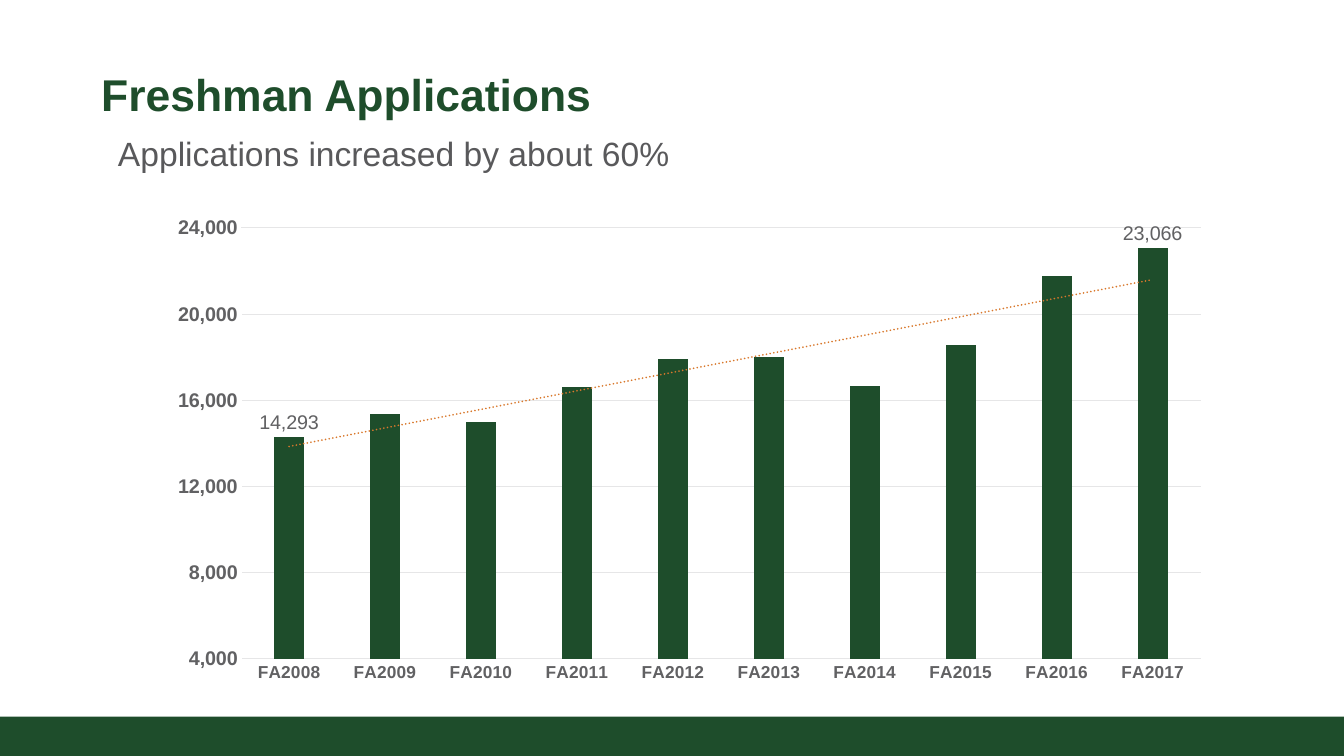
from dataclasses import dataclass

from lxml import etree
from pptx import Presentation
from pptx.chart.data import CategoryChartData
from pptx.dml.color import RGBColor
from pptx.enum.chart import XL_CHART_TYPE, XL_LABEL_POSITION, XL_TICK_MARK
from pptx.enum.shapes import MSO_SHAPE
from pptx.enum.text import MSO_ANCHOR, PP_ALIGN
from pptx.oxml import parse_xml
from pptx.oxml.ns import nsdecls, qn
from pptx.util import Cm, Pt

COLUMNS = XL_CHART_TYPE.COLUMN_CLUSTERED
OUTSIDE_END = XL_LABEL_POSITION.OUTSIDE_END
NO_TICK = XL_TICK_MARK.NONE
RECTANGLE = MSO_SHAPE.RECTANGLE
BOTTOM = MSO_ANCHOR.BOTTOM
LEFT = PP_ALIGN.LEFT


@dataclass(frozen=True)
class Theme:
    font: str = "Arial"
    green: str = "1E4D2B"
    subtitle: str = "59595B"
    label: str = "616163"
    grid: str = "E6E6E7"
    trend: str = "D9782C"
    white: str = "FFFFFF"
    title_size: float = 36
    subtitle_size: float = 27.2
    value_size: float = 16
    category_size: float = 14


THEME = Theme()
SLIDE_WIDTH, SLIDE_HEIGHT = Cm(38.38), Cm(21.59)
BAND_HEIGHT = Cm(1.12)
FIRST_YEAR = 2008
APPLICATIONS = (14293, 15357, 15014, 16602, 17935, 18014, 16667, 18570, 21781, 23066)
PLOT_LAYOUT = {"x": 0.112, "y": 0.072, "w": 0.863, "h": 0.827}


def style_font(font, size, color, bold=False):
    font.name = THEME.font
    font.size = Pt(size)
    font.bold = bold
    font.color.rgb = RGBColor.from_string(color)


def style_line(line, color):
    line.color.rgb = RGBColor.from_string(color)
    line.width = Pt(0.75)


def add_run(paragraph, text, size, color, bold=False):
    run = paragraph.add_run()
    run.text = text
    style_font(run.font, size, color, bold)


def add_band(slide, left, top, width, height):
    band = slide.shapes.add_shape(RECTANGLE, left, top, width, height)
    band.shadow.inherit = False
    band.fill.solid()
    band.fill.fore_color.rgb = RGBColor.from_string(THEME.green)
    band.line.fill.background()


def add_heading(slide, left, top, width, height):
    title = slide.shapes.title
    title.left, title.top, title.width, title.height = left, top, width, Cm(2.06)
    frame = title.text_frame
    frame.vertical_anchor = BOTTOM
    frame.margin_left = frame.margin_right = Cm(0.25)
    frame.margin_top = frame.margin_bottom = Cm(0.25)
    paragraph = frame.paragraphs[0]
    paragraph.alignment = LEFT
    add_run(paragraph, "Freshman Applications", THEME.title_size, THEME.green, True)

    subtitle_height = Cm(1.42)
    subtitle = slide.shapes.add_textbox(
        left + Cm(0.48), top + height - subtitle_height, Cm(27.43), subtitle_height)
    subtitle.text_frame.word_wrap = True
    add_run(subtitle.text_frame.paragraphs[0], "Applications increased by about 60%",
            THEME.subtitle_size, THEME.subtitle)


def style_axis(axis, size, line_color):
    axis.major_tick_mark = axis.minor_tick_mark = NO_TICK
    style_font(axis.tick_labels.font, size, THEME.label, True)
    style_line(axis.format.line, line_color)


def set_plot_layout(chart):
    plot_area = chart.element.find(".//" + qn("c:plotArea"))
    for layout in plot_area.findall(qn("c:layout")):
        plot_area.remove(layout)
    layout = parse_xml(f"<c:layout {nsdecls('c')}><c:manualLayout/></c:layout>")
    settings = {"layoutTarget": "inner", "xMode": "edge", "yMode": "edge", **PLOT_LAYOUT}
    for name, value in settings.items():
        etree.SubElement(layout[0], qn(f"c:{name}")).set("val", str(value))
    plot_area.insert(0, layout)


def add_trend_line(series):
    trend_line = parse_xml(
        f'<c:trendline {nsdecls("c", "a")}><c:spPr><a:ln w="{Pt(1.5)}" cap="rnd">'
        f'<a:solidFill><a:srgbClr val="{THEME.trend}"/></a:solidFill>'
        '<a:prstDash val="sysDot"/></a:ln></c:spPr><c:trendlineType val="linear"/>'
        '<c:dispRSqr val="0"/><c:dispEq val="0"/></c:trendline>')
    series._element.find(qn("c:cat")).addprevious(trend_line)


def add_applications_chart(slide, left, top, width, height):
    data = CategoryChartData(number_format="#,##0")
    data.categories = [f"FA{FIRST_YEAR + year}" for year in range(len(APPLICATIONS))]
    data.add_series("Applications", APPLICATIONS)
    chart = slide.shapes.add_chart(COLUMNS, left, top, width, height, data).chart
    chart.has_title = chart.has_legend = False
    style_font(chart.font, THEME.value_size, THEME.label)
    set_plot_layout(chart)

    style_axis(chart.category_axis, THEME.category_size, THEME.grid)
    value_axis = chart.value_axis
    style_axis(value_axis, THEME.value_size, THEME.white)
    value_axis.minimum_scale, value_axis.maximum_scale = 4000, 24000
    value_axis.major_unit = 4000
    value_axis.tick_labels.number_format = "#,##0"
    value_axis.tick_labels.number_format_is_linked = False
    style_line(value_axis.major_gridlines.format.line, THEME.grid)

    plot = chart.plots[0]
    plot.gap_width, plot.overlap = 219, -27
    plot.vary_by_categories = False
    series = plot.series[0]
    series.format.fill.solid()
    series.format.fill.fore_color.rgb = RGBColor.from_string(THEME.green)
    series.data_labels.show_value = False
    for index in (0, len(APPLICATIONS) - 1):
        label = series.points[index].data_label
        style_font(label.font, THEME.value_size, THEME.label)
        label.position = OUTSIDE_END
    add_trend_line(series)


def main():
    presentation = Presentation()
    presentation.slide_width, presentation.slide_height = SLIDE_WIDTH, SLIDE_HEIGHT
    slide = presentation.slides.add_slide(presentation.slide_layouts.get_by_name("Title Only"))
    add_band(slide, 0, SLIDE_HEIGHT - BAND_HEIGHT, SLIDE_WIDTH, BAND_HEIGHT)
    add_heading(slide, Cm(2.64), Cm(1.63), Cm(33.1), Cm(3.45))
    add_applications_chart(slide, Cm(3.33), Cm(5.44), Cm(31.75), Cm(14.88))
    presentation.save("out.pptx")


if __name__ == "__main__":
    main()
